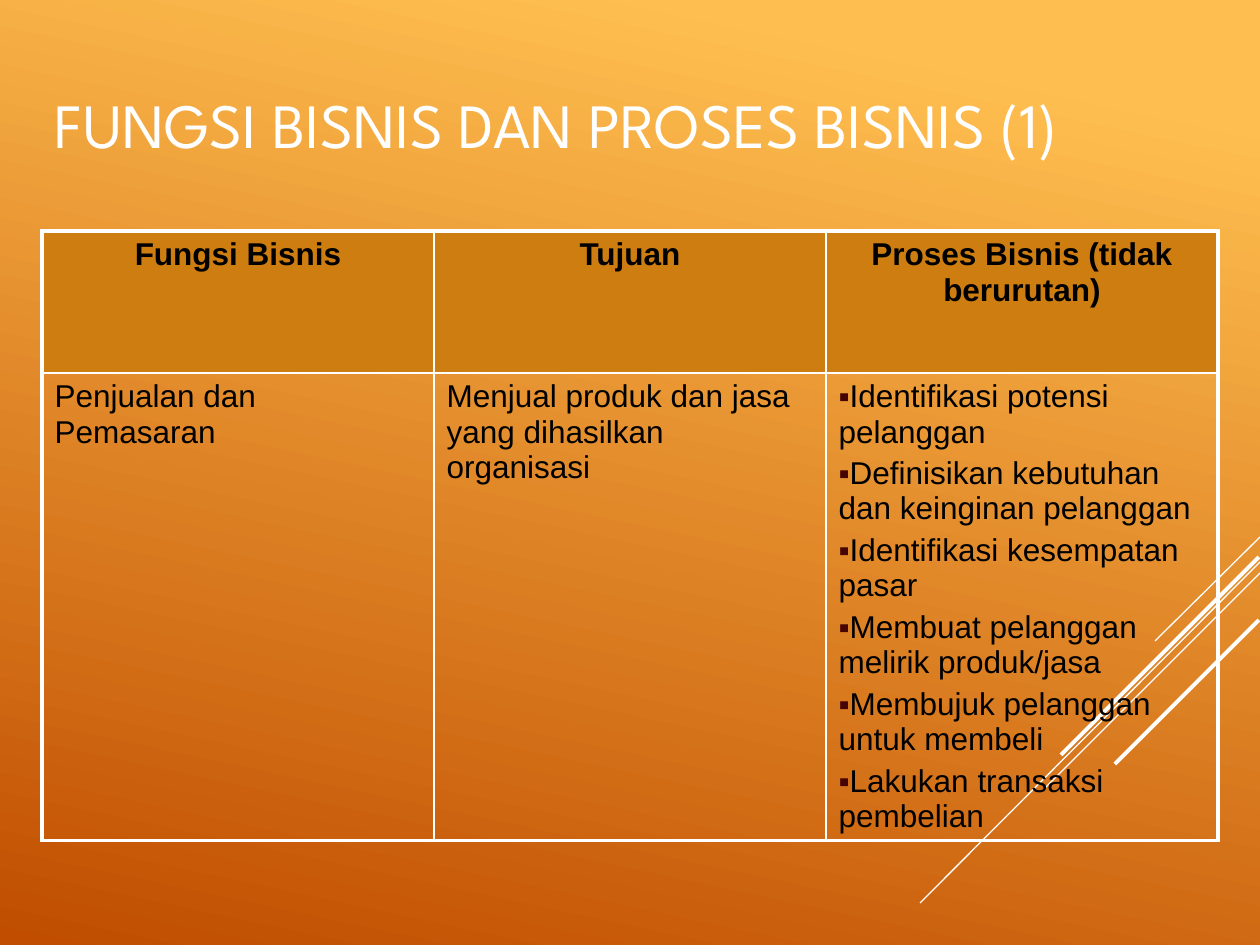
from pptx import Presentation
from pptx.dml.color import RGBColor
from pptx.enum import shapes, text
from pptx.oxml import ns
from pptx.util import Emu, Pt
from lxml import etree

# Content
TITLE = "FUNGSI BISNIS DAN PROSES BISNIS (1)"
HEADERS = ["Fungsi Bisnis", "Tujuan", "Proses Bisnis (tidak berurutan)"]
FUNCTION = ["Penjualan dan Pemasaran"]
PURPOSE = ["Menjual produk dan jasa yang dihasilkan organisasi"]
PROCESSES = [
    "Identifikasi potensi pelanggan",
    "Definisikan kebutuhan dan keinginan pelanggan",
    "Identifikasi kesempatan pasar",
    "Membuat pelanggan melirik produk/jasa",
    "Membujuk pelanggan untuk membeli",
    "Lakukan transaksi pembelian",
]
ROWS = [[[header] for header in HEADERS], [FUNCTION, PURPOSE, PROCESSES]]
BULLET_COLUMN = 2

# Layout in px: start x, start y, end x, end y, width in points
STRIPES = [
    (1260, 537, 1155, 641, 0.75),
    (1260, 562, 920, 903, 0.75),
    (1260, 573, 1043, 790, 0.75),
    (1259, 557, 1061, 755, 2.25),
    (1259, 620, 1115, 764, 2.25),
]
TITLE_BOX = (42, 32, 1173, 183)
TABLE_LEFT, TABLE_TOP, COLUMN_WIDTH = 42, 231, 392
ROW_HEIGHTS = [142, 467]
OUTER, INNER = 2.25, 1

WHITE = RGBColor(0xFF, 0xFF, 0xFF)
BLACK = RGBColor(0, 0, 0)
LIGHT = RGBColor(0xFF, 0xBF, 0x50)
DARK = RGBColor(0xC0, 0x4D, 0x00)
HEADER_FILL = RGBColor(0xCE, 0x7D, 0x10)
BULLET = RGBColor(0x46, 0x04, 0x02)


def px(value):
    return Emu(round(value * 914400 / 126))


def add(parent, tag, **attributes):
    return etree.SubElement(parent, ns.qn(tag), attributes)


def set_borders(cell, widths):
    properties = cell._tc.get_or_add_tcPr()
    for side, width in zip("LRTB", widths):
        line = add(properties, f"a:ln{side}", w=str(Pt(width)))
        add(add(line, "a:solidFill"), "a:srgbClr", val=str(WHITE))


def set_bullet(para):
    properties = para._p.get_or_add_pPr()
    properties.set("marL", "0")
    properties.set("indent", "0")
    add(add(properties, "a:buClr"), "a:srgbClr", val=str(BULLET))
    add(properties, "a:buFont", typeface="Arial")
    add(properties, "a:buChar", char="▪")


deck = Presentation()
deck.slide_width, deck.slide_height = px(1260), px(945)
page = deck.slides.add_slide(deck.slide_layouts[5])

# Background gradient
backdrop = page.background.fill
backdrop.gradient()
backdrop.gradient_angle = 360 - 102
for stop, position, color in zip(backdrop.gradient_stops, (0.1, 1), (LIGHT, DARK)):
    stop.position = position
    stop.color.rgb = color

# Diagonal stripes
for x1, y1, x2, y2, width in STRIPES:
    stripe = page.shapes.add_connector(
        shapes.MSO_CONNECTOR.STRAIGHT, px(x1), px(y1), px(x2), px(y2))
    stripe.line.color.rgb = WHITE
    stripe.line.width = Pt(width)
    add(stripe._element.spPr, "a:effectLst")

# Title
title = page.shapes.title
title.left, title.top, title.width, title.height = map(px, TITLE_BOX)
title.text_frame.text = TITLE
title.text_frame.vertical_anchor = text.MSO_ANCHOR.MIDDLE
para = title.text_frame.paragraphs[0]
para.alignment = text.PP_ALIGN.LEFT
para.font.name, para.font.size = "League Spartan", Pt(36)
para.font.color.rgb = WHITE

# Table
last_row, last_column = len(ROWS) - 1, len(HEADERS) - 1
table = page.shapes.add_table(
    len(ROWS), len(HEADERS), px(TABLE_LEFT), px(TABLE_TOP),
    px(COLUMN_WIDTH * len(HEADERS)), px(sum(ROW_HEIGHTS))).table
table.horz_banding = False
for column in table.columns:
    column.width = px(COLUMN_WIDTH)
for row, height in zip(table.rows, ROW_HEIGHTS):
    row.height = px(height)

for r, row in enumerate(ROWS):
    for c, lines in enumerate(row):
        cell = table.cell(r, c)
        is_header = r == 0
        edges = (c == 0, c == last_column, r == 0, r == last_row)
        set_borders(cell, [OUTER if edge else INNER for edge in edges])
        if is_header:
            cell.fill.solid()
            cell.fill.fore_color.rgb = HEADER_FILL
        else:
            cell.fill.background()
        cell.text_frame.text = "\n".join(lines)
        for para in cell.text_frame.paragraphs:
            para.alignment = text.PP_ALIGN.CENTER if is_header else text.PP_ALIGN.LEFT
            para.space_before = Pt(3.6)
            para.font.name, para.font.size = "Arial", Pt(18)
            para.font.bold = is_header
            para.font.color.rgb = BLACK
            if c == BULLET_COLUMN and not is_header:
                set_bullet(para)

deck.save("out.pptx")
